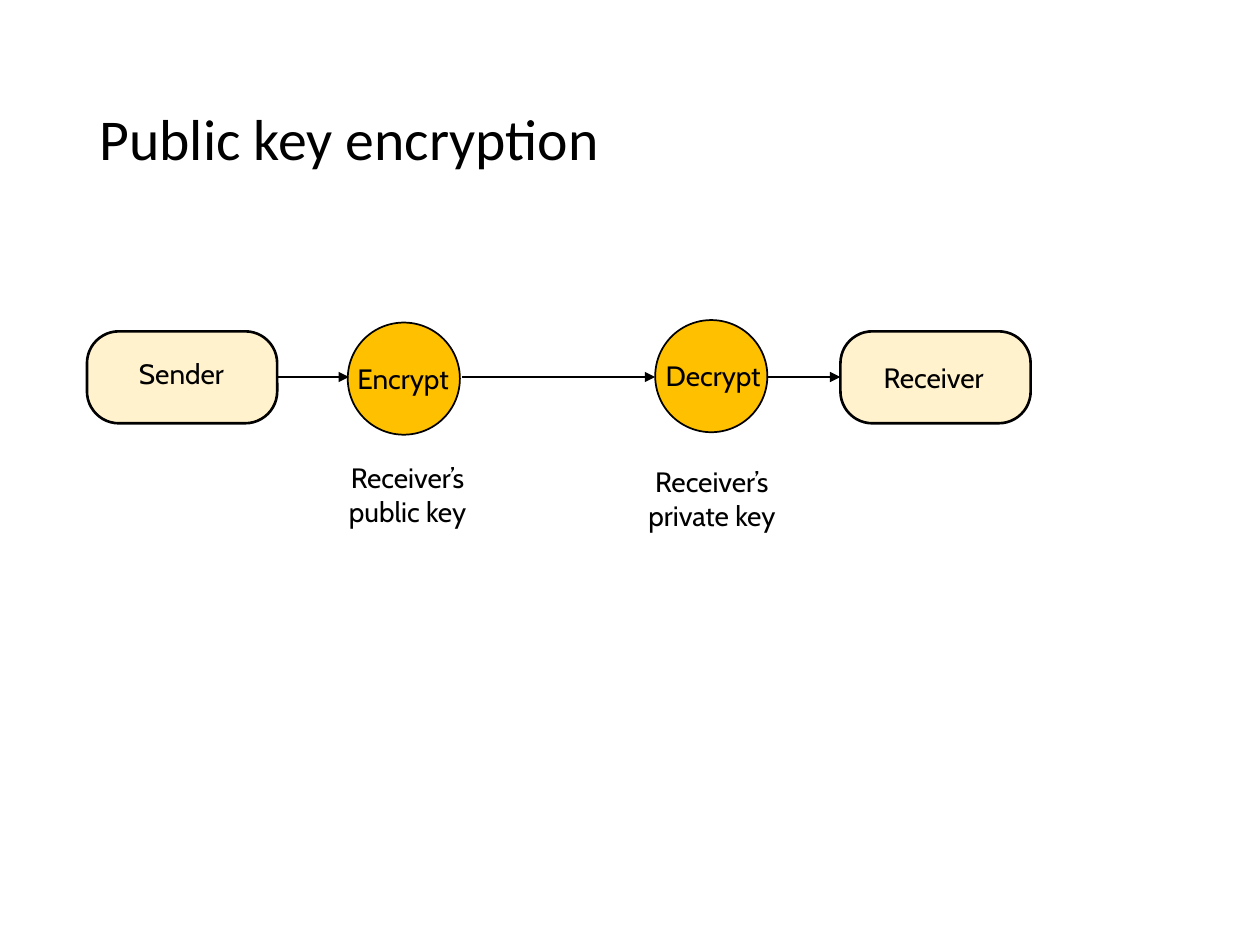
import pptx
import pptx.dml.color
import pptx.enum.shapes
import pptx.enum.text
import pptx.oxml.ns
import pptx.util
from lxml import etree

RGBColor = pptx.dml.color.RGBColor
MSO_SHAPE = pptx.enum.shapes.MSO_SHAPE
PP_ALIGN = pptx.enum.text.PP_ALIGN
MSO_ANCHOR = pptx.enum.text.MSO_ANCHOR
Pt = pptx.util.Pt
qn = pptx.oxml.ns.qn

BLACK = RGBColor(0x00, 0x00, 0x00)
CREAM = RGBColor(0xFF, 0xF2, 0xCC)
AMBER = RGBColor(0xFF, 0xC0, 0x00)

SLIDE_W, SLIDE_H = pptx.util.Inches(10), pptx.util.Inches(7.5)
CELL = SLIDE_W // 100


def grid(*cells):
    return [round(c * CELL) for c in cells]


def add_run(p, text, font, size):
    r = p.add_run()
    r.text = text
    r.font.name = font
    r.font.size = Pt(size)
    r.font.color.rgb = BLACK


def add_title(slide, box, text):
    sp = slide.shapes.title
    sp.left, sp.top, sp.width, sp.height = grid(*box)
    tf = sp.text_frame
    tf.vertical_anchor = MSO_ANCHOR.MIDDLE
    p = tf.paragraphs[0]
    p.alignment = PP_ALIGN.LEFT
    p.line_spacing = 0.9
    add_run(p, text, "Calibri", 33)


def add_node(slide, kind, box, fill, weight):
    sp = slide.shapes.add_shape(kind, *grid(*box))
    sp.shadow.inherit = False
    sp.fill.solid()
    sp.fill.fore_color.rgb = fill
    sp.line.color.rgb = BLACK
    sp.line.width = Pt(weight)
    return sp


def add_label(slide, box, *lines):
    tf = slide.shapes.add_textbox(*grid(*box)).text_frame
    tf.word_wrap = False
    for i, line in enumerate(lines):
        p = tf.add_paragraph() if i else tf.paragraphs[0]
        p.alignment = PP_ALIGN.CENTER
        add_run(p, line, "Cabin", 16)


def add_arrow(slide, x1, x2, y, weight):
    cx = slide.shapes.add_connector(
        pptx.enum.shapes.MSO_CONNECTOR.STRAIGHT, *grid(x1, y, x2, y))
    cx.line.color.rgb = BLACK
    cx.line.width = Pt(weight)
    etree.SubElement(cx.line._get_or_add_ln(), qn("a:tailEnd"), type="triangle")
    etree.SubElement(cx._element.spPr, qn("a:effectLst"))


def add_flow(slide, box):
    left, top, width, height = box
    party_w, party_h, disc = 15.1, 7.3, 8.9

    for x in (left, left + width - party_w):
        sp = add_node(slide, MSO_SHAPE.ROUNDED_RECTANGLE,
                      (x, top + 0.9, party_w, party_h), CREAM, 1.5)
        sp.adjustments[0] = 0.347

    for dx, dy in ((20.7, 0.2), (45.1, 0)):
        add_node(slide, MSO_SHAPE.OVAL,
                 (left + dx, top + dy, disc, disc), AMBER, 1)

    for dx, dy, w, h, lines in (
        (44.8, 2.6, 9.8, 3.7, ["Decrypt"]),
        (20.3, 2.8, 9.6, 3.7, ["Encrypt"]),
        (19.3, 10.7, 12.3, 6.4, ["Receiver’s", "public key"]),
        (43, 11, 13.2, 6.4, ["Receiver’s", "private key"]),
        (3.1, 2.4, 8.8, 3.7, ["Sender"]),
        (61.9, 2.7, 10.6, 3.7, ["Receiver"]),
    ):
        add_label(slide, (left + dx, top + dy, w, h), *lines)

    for x1, x2, weight in ((party_w, 20.8, 1), (29.8, 45.1, 1.5),
                           (45.1 + disc, width - party_w, 1)):
        add_arrow(slide, left + x1, left + x2, top + height * 0.26, weight)


def main():
    prs = pptx.Presentation()
    prs.slide_width, prs.slide_height = SLIDE_W, SLIDE_H
    slide = prs.slides.add_slide(prs.slide_layouts[5])
    add_title(slide, (6.9, 4, 86.2, 14.5), "Public key encryption")
    add_flow(slide, (6.9, 25.4, 74.9, 17.4))
    prs.save("out.pptx")


if __name__ == "__main__":
    main()
